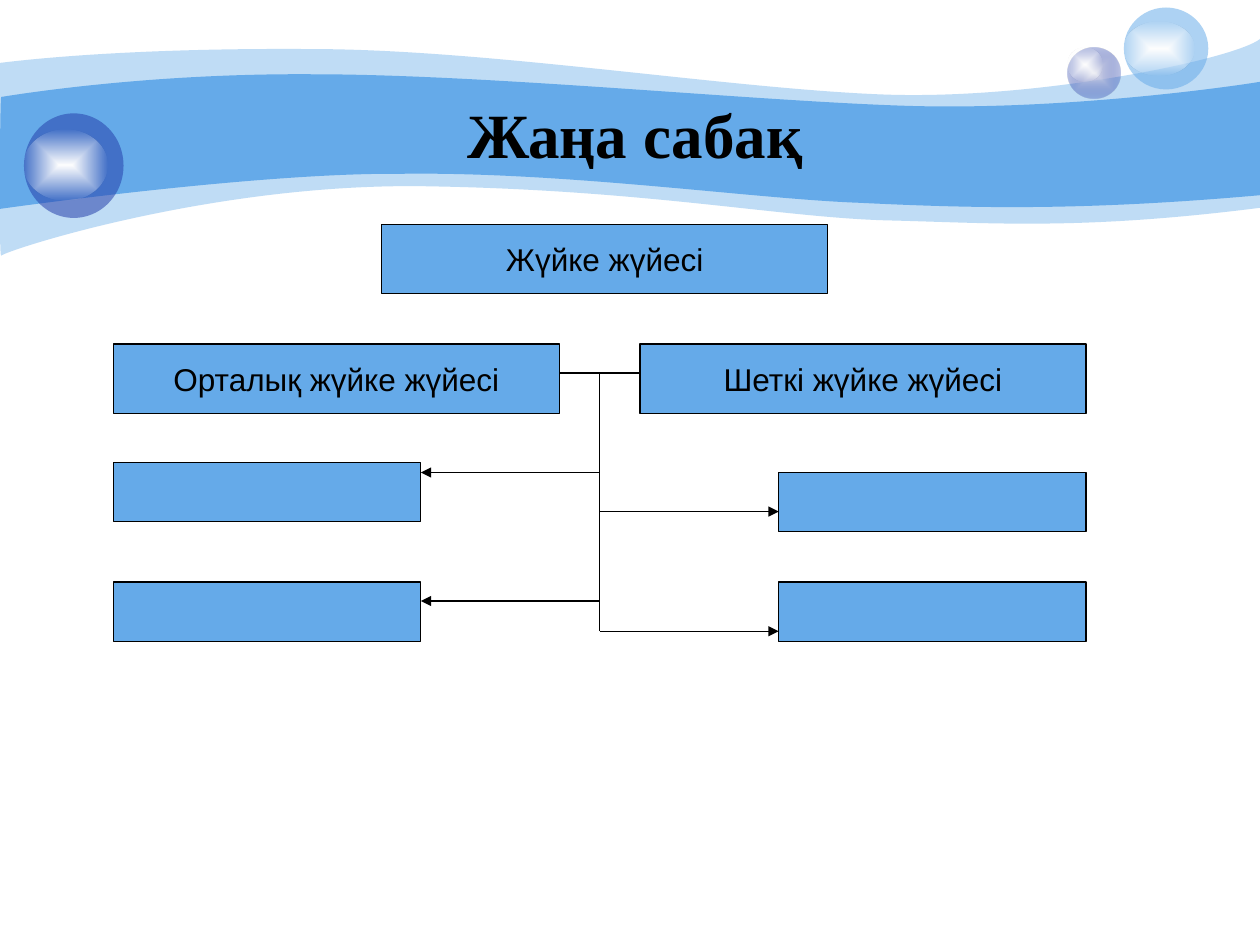
import pptx
import pptx.util
from pptx.dml.color import RGBColor
from pptx.enum.shapes import MSO_CONNECTOR, MSO_SHAPE
from pptx.enum.text import MSO_ANCHOR, PP_ALIGN
from pptx.oxml import parse_xml
from pptx.oxml.ns import nsdecls, qn
from pptx.util import Inches, Pt

BLUE = RGBColor(0x65, 0xAA, 0xE9)
NAVY = RGBColor(0x23, 0x3D, 0xA9)
PEARL = RGBColor(0xE1, 0xE2, 0xED)
WHITE = RGBColor(0xFF, 0xFF, 0xFF)
BLACK = RGBColor(0, 0, 0)

TITLE = "Жаңа сабақ"
WAVES = [
    (41, (0, 0.5), [
        [(0.24, 0.47), (1.07, 0.38), (2.47, 0.39)],
        [(3.86, 0.39), (5.75, 0.7), (6.99, 0.75)],
        [(8.22, 0.8), (9.8, 0.47), (10, 0.31)],
        [(10, 1.65)],
        [(8.58, 1.83), (7.87, 1.77), (7.05, 1.75)],
        [(6.22, 1.73), (5.15, 1.51), (3.43, 1.48)],
        [(1.72, 1.44), (0.04, 1.99), (0.01, 2.03)],
        [(-0.01, 2.08), (0, 0.75), (0, 0.5)],
    ]),
    (100, (0.01, 0.77), [
        [(0.02, 0.77), (1.1, 0.58), (2.48, 0.59)],
        [(3.86, 0.59), (5.95, 0.8), (7.18, 0.84)],
        [(8.41, 0.88), (9.76, 0.69), (10, 0.65)],
        [(10, 1.55)],
        [(8.53, 1.68), (7.65, 1.65), (6.82, 1.61)],
        [(5.99, 1.58), (4.47, 1.36), (3.17, 1.38)],
        [(2.03, 1.37), (-0.02, 1.66), (-0.01, 1.66)],
        [(0, 1.66), (0, 0.77), (0.01, 0.77)],
    ]),
]
GLOW = [(WHITE, 100), (WHITE, 0)]
BUBBLES = [
    ((8.47, 0.38, 0.42, 0.4), [(PEARL, 100), (NAVY, 31)], (8.47, 0.38, 0.28, 0.27)),
    ((8.92, 0.06, 0.67, 0.65), [(BLUE, 53)], (8.92, 0.17, 0.56, 0.43)),
    ((0.19, 0.9, 0.79, 0.83), [(NAVY, 53)], (0.19, 1.03, 0.66, 0.56)),
]
LARGE, SMALL = (3.54, 0.55), (2.44, 0.47)
LEFT, RIGHT = 0.9, 8.62
BOXES = [
    ("Жүйке жүйесі", 3.03, 1.78, LARGE),
    ("Орталық жүйке жүйесі", LEFT, 2.73, LARGE),
    ("Шеткі жүйке жүйесі", RIGHT - LARGE[0], 2.73, LARGE),
    ("", LEFT, 3.67, SMALL),
    ("", LEFT, 4.62, SMALL),
    ("", RIGHT - SMALL[0], 3.75, SMALL),
    ("", RIGHT - SMALL[0], 4.62, SMALL),
]
TRUNK, TRUNK_TOP, TRUNK_BOTTOM = 4.76, 2.96, 5.01
BRANCHES = [
    (LEFT + SMALL[0], 3.75),
    (LEFT + SMALL[0], 4.77),
    (RIGHT - SMALL[0], 4.06),
    (RIGHT - SMALL[0], TRUNK_BOTTOM),
]


def paint(shape, stops):
    shape.shadow.inherit = False
    shape.line.fill.background()
    colors = [
        f'<a:srgbClr val="{color}"><a:alpha val="{alpha * 1000}"/></a:srgbClr>'
        for color, alpha in stops
    ]
    if len(colors) == 1:
        markup = f'<a:solidFill {nsdecls("a")}>{colors[0]}</a:solidFill>'
    else:
        marks = "".join(
            f'<a:gs pos="{index * 100000}">{color}</a:gs>'
            for index, color in enumerate(colors)
        )
        markup = (
            f'<a:gradFill {nsdecls("a")} rotWithShape="1"><a:gsLst>{marks}</a:gsLst>'
            '<a:path path="shape"><a:fillToRect l="50000" t="50000" r="50000" b="50000"/>'
            "</a:path></a:gradFill>"
        )
    shape.fill.solid()
    properties = shape._element.spPr
    properties.replace(properties.find(qn("a:solidFill")), parse_xml(markup))


def add_wave(page, alpha, start, segments):
    builder = page.shapes.build_freeform(*map(Inches, start), scale=1.0)
    points = [tuple(map(Inches, point)) for segment in segments for point in segment]
    builder.add_line_segments(points, close=True)
    wave = builder.convert_to_shape()
    corners = iter(list(wave._element.iter(qn("a:lnTo"))))
    for segment in segments:
        steps = [next(corners) for point in segment]
        if len(steps) == 3:
            curve = parse_xml(f'<a:cubicBezTo {nsdecls("a")}/>')
            steps[0].addprevious(curve)
            for step in steps:
                curve.append(step[0])
                step.getparent().remove(step)
    paint(wave, [(BLUE, alpha)])


def add_bubble(page, ball, stops, shine):
    group = page.shapes.add_group_shape()
    for place, colors in ((ball, stops), (shine, GLOW)):
        oval = group.shapes.add_shape(MSO_SHAPE.OVAL, *map(Inches, place))
        paint(oval, colors)


def write(shape, text, font, size, bold=False):
    frame = shape.text_frame
    frame.vertical_anchor = MSO_ANCHOR.MIDDLE
    frame.text = text
    para = frame.paragraphs[0]
    para.alignment = PP_ALIGN.CENTER
    span = para.runs[0]
    span.font.name = font
    span.font.size = Pt(size)
    span.font.bold = bold
    span.font.color.rgb = BLACK


def add_box(page, text, left, top, size):
    box = page.shapes.add_shape(
        MSO_SHAPE.RECTANGLE, *map(Inches, (left, top, *size)))
    box.shadow.inherit = False
    box.fill.solid()
    box.fill.fore_color.rgb = BLUE
    box.line.color.rgb = BLACK
    box.line.width = Pt(0.75)
    if text:
        write(box, text, "Arial", 18)
        box.text_frame.word_wrap = False


def add_line(page, start, end, arrow=False):
    line = page.shapes.add_connector(
        MSO_CONNECTOR.STRAIGHT, *map(Inches, (*start, *end)))
    line.line.color.rgb = BLACK
    line.line.width = Pt(0.75)
    if arrow:
        head = parse_xml(f'<a:tailEnd {nsdecls("a")} type="triangle"/>')
        line.line._get_or_add_ln().append(head)
    line._element.spPr.append(parse_xml(f'<a:effectLst {nsdecls("a")}/>'))


def main():
    deck = pptx.Presentation()
    deck.slide_width, deck.slide_height = Inches(10), Inches(7.5)
    page = deck.slides.add_slide(deck.slide_layouts[6])
    for wave in WAVES:
        add_wave(page, *wave)
    for bubble in BUBBLES:
        add_bubble(page, *bubble)
    title = page.shapes.add_textbox(*map(Inches, (1, 0.75, 8.08, 0.62)))
    title.text_frame.word_wrap = True
    write(title, TITLE, "Times New Roman", 36, bold=True)
    for box in BOXES:
        add_box(page, *box)
    add_line(page, (TRUNK, TRUNK_TOP), (TRUNK, TRUNK_BOTTOM))
    add_line(page, (LEFT + LARGE[0], TRUNK_TOP), (RIGHT - LARGE[0], TRUNK_TOP))
    for end, level in BRANCHES:
        add_line(page, (TRUNK, level), (end, level), arrow=True)
    deck.save("out.pptx")


if __name__ == "__main__":
    main()
